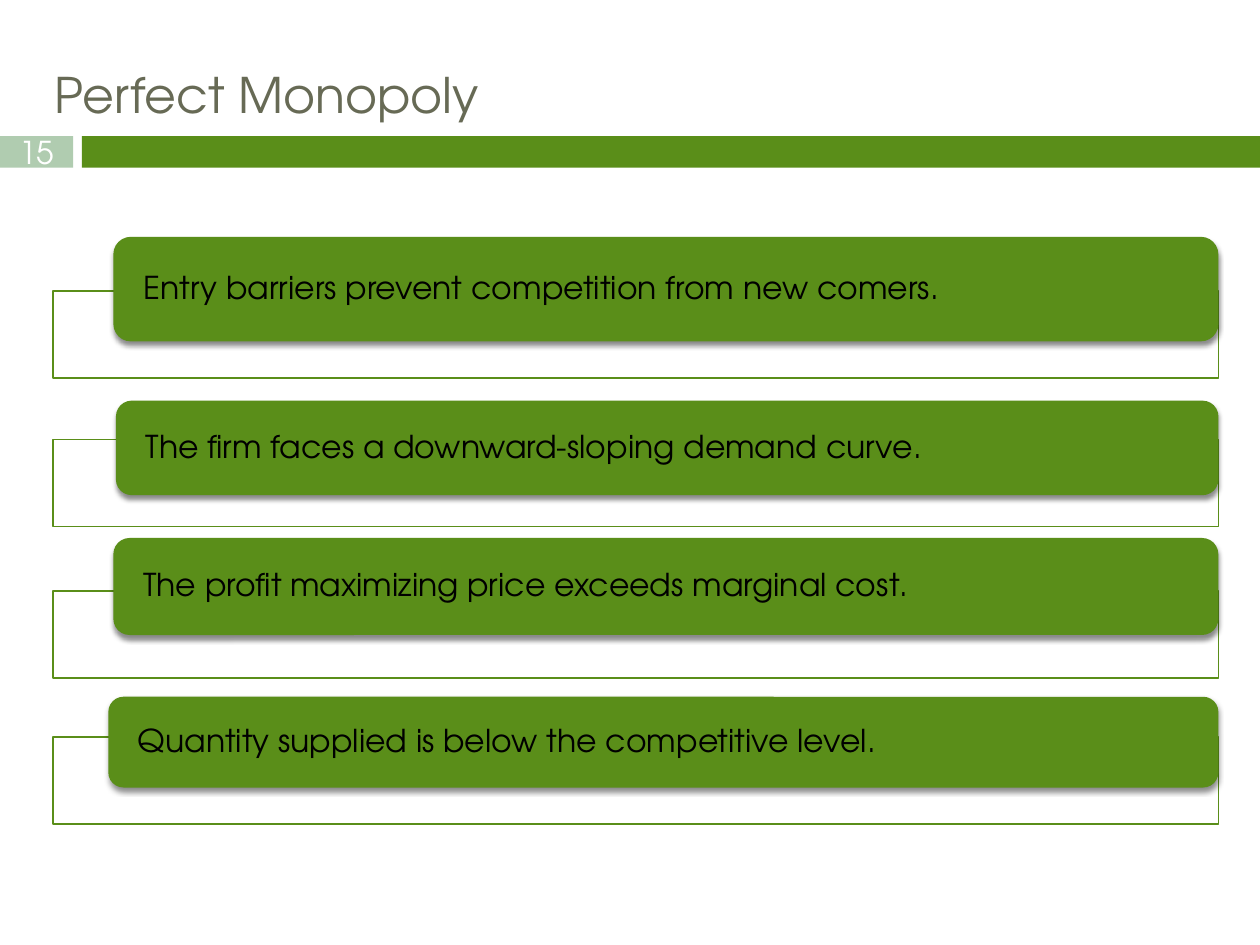
from dataclasses import dataclass

from lxml import etree
from pptx import Presentation
from pptx import util as u
from pptx.dml.color import RGBColor
from pptx.enum import shapes, text
from pptx.oxml.ns import qn


@dataclass(frozen=True)
class Theme:
    font: str = "TeX Gyre Adventor"
    green: str = "5A8E19"
    pale: str = "B0CCB0"
    olive: str = "676A55"
    white: str = "FFFFFF"
    black: str = "000000"
    head: int = 28
    body: int = 18
    rule: float = 0.79


THEME = Theme()
WIDE, HIGH = 10, 7.5
LEFT, RIGHT = 0.42, 9.67
BAND_TOP, BAND_HIGH = 1.08, 0.25
FRAME_HIGH = 0.69
# Frame top, card left, card top, card height, wording
POINTS = [
    (2.31, 0.9, 1.88, 0.83, "Entry barriers prevent competition from new comers."),
    (3.49, 0.92, 3.18, 0.75, "The firm faces a downward-sloping demand curve."),
    (4.69, 0.9, 4.27, 0.77, "The profit maximizing price exceeds marginal cost."),
    (5.85, 0.86, 5.53, 0.72, "Quantity supplied is below the competitive level."),
]


def color(code):
    return RGBColor.from_string(code)


def add_alpha(node, share):
    etree.SubElement(node, qn("a:alpha"), val=str(share * 1000))


def add_box(slide, kind, left, top, width, height, fill):
    box = slide.shapes.add_shape(
        kind, *(u.Inches(n) for n in (left, top, width, height)))
    box.shadow.inherit = False
    box.fill.solid()
    box.fill.fore_color.rgb = color(fill)
    box.line.fill.background()
    return box


def write(shape, words, size, ink, align, inset):
    frame = shape.text_frame
    frame.word_wrap = True
    frame.auto_size = text.MSO_AUTO_SIZE.NONE
    frame.vertical_anchor = text.MSO_ANCHOR.MIDDLE
    frame.margin_left = frame.margin_right = u.Inches(inset)
    frame.margin_top = frame.margin_bottom = 0
    para = frame.paragraphs[0]
    para.alignment = align
    run = para.add_run()
    run.text = words
    run.font.name = THEME.font
    run.font.size = u.Pt(size)
    run.font.color.rgb = color(ink)
    return para


def add_shade(shape):
    """Cast a soft shadow straight down."""
    list_ = shape._element.spPr.find(qn("a:effectLst"))
    shade = etree.SubElement(
        list_, qn("a:outerShdw"), blurRad=str(u.Pt(3)), dist=str(u.Pt(2.4)),
        dir="5400000", rotWithShape="0")
    ink = etree.SubElement(shade, qn("a:srgbClr"), val=THEME.black)
    add_alpha(ink, 45)


def add_title(slide, words):
    title = slide.shapes.title
    title.left, title.top = u.Inches(0.33), u.Inches(0.42)
    title.width, title.height = u.Inches(9.25), u.Inches(0.65)
    write(title, words, THEME.head, THEME.olive, text.PP_ALIGN.LEFT, 0.1)


def add_band(slide, number):
    rect = shapes.MSO_SHAPE.RECTANGLE
    add_box(slide, rect, 0.65, BAND_TOP, WIDE - 0.65, BAND_HIGH, THEME.green)
    tab = add_box(slide, rect, 0, BAND_TOP, 0.58, BAND_HIGH, THEME.pale)
    write(tab, number, THEME.body, THEME.white, text.PP_ALIGN.CENTER, 0)


def add_frame(slide, top):
    frame = add_box(slide, shapes.MSO_SHAPE.RECTANGLE,
                    LEFT, top, RIGHT - LEFT, FRAME_HIGH, THEME.white)
    add_alpha(frame._element.spPr.find(qn("a:solidFill"))[0], 90)
    frame.line.color.rgb = color(THEME.green)
    frame.line.width = u.Pt(THEME.rule)


def add_card(slide, left, top, height, words):
    card = add_box(slide, shapes.MSO_SHAPE.ROUNDED_RECTANGLE,
                   left, top, RIGHT - left, height, THEME.green)
    add_shade(card)
    para = write(card, words, THEME.body, THEME.black, text.PP_ALIGN.LEFT, 0.2)
    para.line_spacing = 0.9


def main():
    deck = Presentation()
    deck.slide_width, deck.slide_height = u.Inches(WIDE), u.Inches(HIGH)
    slide = deck.slides.add_slide(deck.slide_layouts[5])
    add_band(slide, "15")
    add_title(slide, "Perfect Monopoly")
    for base, *card in POINTS:
        add_frame(slide, base)
        add_card(slide, *card)
    deck.save("out.pptx")


if __name__ == "__main__":
    main()
